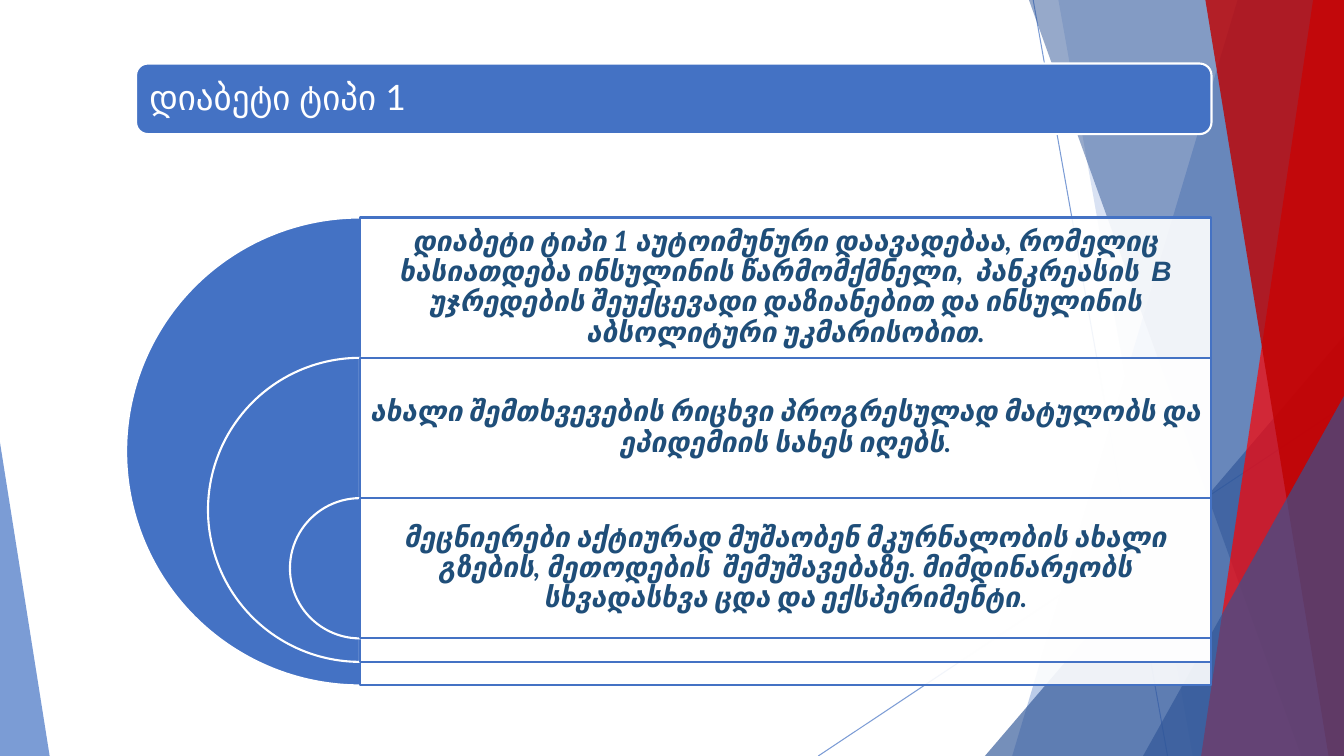
from lxml.etree import SubElement
from pptx import Presentation
from pptx.dml.color import RGBColor
from pptx.enum.shapes import MSO_CONNECTOR, MSO_SHAPE
from pptx.enum.text import MSO_ANCHOR, MSO_AUTO_SIZE, PP_ALIGN
from pptx.oxml.ns import qn
from pptx.util import Pt

COLORS = {
    "blue": "4472C4",
    "navy": "2F5597",
    "red": "FF0000",
    "crimson": "BF0000",
    "white": "FFFFFF",
    "text": "1F4E79",
}
WIDTH, HEIGHT = 960, 540


def paint(shape, fill, opacity=100, edge=None):
    shape.shadow.inherit = False
    shape.fill.solid()
    shape.fill.fore_color.rgb = RGBColor.from_string(COLORS[fill])
    if opacity < 100:
        color = shape.fill._xPr.find(qn("a:solidFill"))[0]
        SubElement(color, qn("a:alpha"), val=str(opacity * 1000))
    if edge:
        shape.line.color.rgb = RGBColor.from_string(COLORS[edge])
        shape.line.width = Pt(1.5)
    else:
        shape.line.fill.background()


def write_text(box, spans, size, color, align, inset, bold=False, italic=False):
    frame = box.text_frame
    frame.word_wrap = True
    frame.auto_size = MSO_AUTO_SIZE.NONE
    frame.vertical_anchor = MSO_ANCHOR.MIDDLE
    frame.margin_left = frame.margin_right = Pt(inset)
    frame.margin_top = frame.margin_bottom = Pt(inset)
    para = frame.paragraphs[0]
    para.alignment = align
    para.line_spacing = 0.9
    for text, font in spans:
        span = para.add_run()
        span.text = text
        span.font.name = font
        span.font.size = Pt(size)
        span.font.bold = bold
        span.font.italic = italic
        span.font.color.rgb = RGBColor.from_string(COLORS[color])


deck = Presentation()
deck.slide_width, deck.slide_height = Pt(WIDTH), Pt(HEIGHT)
page = deck.slides.add_slide(deck.slide_layouts[5])
shapes = page.shapes

# Thin background lines
for ends in [(738, 0, 834, 540), (960, 290, 584.5, 540)]:
    line = shapes.add_connector(MSO_CONNECTOR.STRAIGHT, *map(Pt, ends))
    line.line.color.rgb = RGBColor.from_string(COLORS["blue"])
    line.line.width = Pt(0.75)
    for color in line.element.spPr.iter(qn("a:srgbClr")):
        SubElement(color, qn("a:alpha"), val="70000")
    SubElement(line.element.spPr, qn("a:effectLst"))

# Background facets: bands run to the right edge, triangles stand on the bottom
facets = [
    ("band", 884, 723, "blue", 36),
    ("band", 756, 852, "blue", 20),
    ("triangle", 703.5, 240, "navy", 66),
    ("band", 735, 929.5, "navy", 50),
    ("band", 938, 858, "red", 70),
    ("band", 861, 949, "crimson", 80),
    ("triangle", 816.5, 283, "navy", 66),
]
for kind, first, second, color, opacity in facets:
    if kind == "band":
        builder = shapes.build_freeform(Pt(first), 0)
        corners = [(WIDTH, 0), (WIDTH, HEIGHT), (second, HEIGHT)]
        builder.add_line_segments([(Pt(x), Pt(y)) for x, y in corners], close=True)
        facet = builder.convert_to_shape()
    else:
        facet = shapes.add_shape(MSO_SHAPE.ISOSCELES_TRIANGLE, Pt(first), Pt(second),
                                 Pt(WIDTH - first), Pt(HEIGHT - second))
        facet.adjustments[0] = 1
    paint(facet, color, opacity)

corner = shapes.add_shape(MSO_SHAPE.ISOSCELES_TRIANGLE, 0, Pt(316), Pt(35.5), Pt(224))
corner.adjustments[0] = 0
paint(corner, "blue", 70)

# Title bar
bar = shapes.add_shape(MSO_SHAPE.ROUNDED_RECTANGLE, Pt(97.2), Pt(45.4), Pt(768.2), Pt(50.4))
paint(bar, "blue", edge="white")
title = shapes.title
title.left, title.top, title.width, title.height = Pt(99.4), Pt(47.5), Pt(763), Pt(46)
write_text(title, [("დიაბეტი ტიპი 1", "Lato")], size=25, color="white",
           align=PP_ALIGN.LEFT, inset=7.2)
bar.element.addnext(title.element)

# Nested half circles, each with its panel and statement
statements = [
    [("დიაბეტი ტიპი 1 აუტოიმუნური დაავადებაა, რომელიც ხასიათდება ინსულინის "
      "წარმომქმნელი,  პანკრეასის  ", "Lato"),
     ("B ", "Arial"),
     ("უჯრედების შეუქცევადი დაზიანებით და ინსულინის აბსოლიტური უკმარისობით.", "Lato")],
    [("ახალი შემთხვევების რიცხვი პროგრესულად მატულობს და ეპიდემიის სახეს იღებს.", "Lato")],
    [("მეცნიერები აქტიურად მუშაობენ მკურნალობის ახალი გზების, მეთოდების  შემუშავებაზე. "
      "მიმდინარეობს სხვადასხვა ცდა და ექსპერიმენტი.", "Lato")],
]
PANEL_LEFT, PANEL_TOP, PANEL_WIDTH, ROW = 257.2, 155.4, 607.8, 100.2
RING_STEP = 117

for index, spans in enumerate(statements):
    top = PANEL_TOP + index * ROW
    size = ROW + (len(statements) - 1 - index) * RING_STEP
    ring = shapes.add_shape(MSO_SHAPE.PIE, Pt(PANEL_LEFT - size / 2), Pt(top), Pt(size), Pt(size))
    ring.adjustments[0], ring.adjustments[1] = 54, 162
    paint(ring, "blue", edge="white")
    panel = shapes.add_shape(MSO_SHAPE.RECTANGLE, Pt(PANEL_LEFT), Pt(top),
                             Pt(PANEL_WIDTH), Pt(size))
    paint(panel, "white", 90, edge="blue")
    box = shapes.add_textbox(Pt(PANEL_LEFT), Pt(top), Pt(PANEL_WIDTH), Pt(ROW))
    write_text(box, spans, size=20, color="text", align=PP_ALIGN.CENTER, inset=6,
               bold=True, italic=True)

deck.save("out.pptx")
